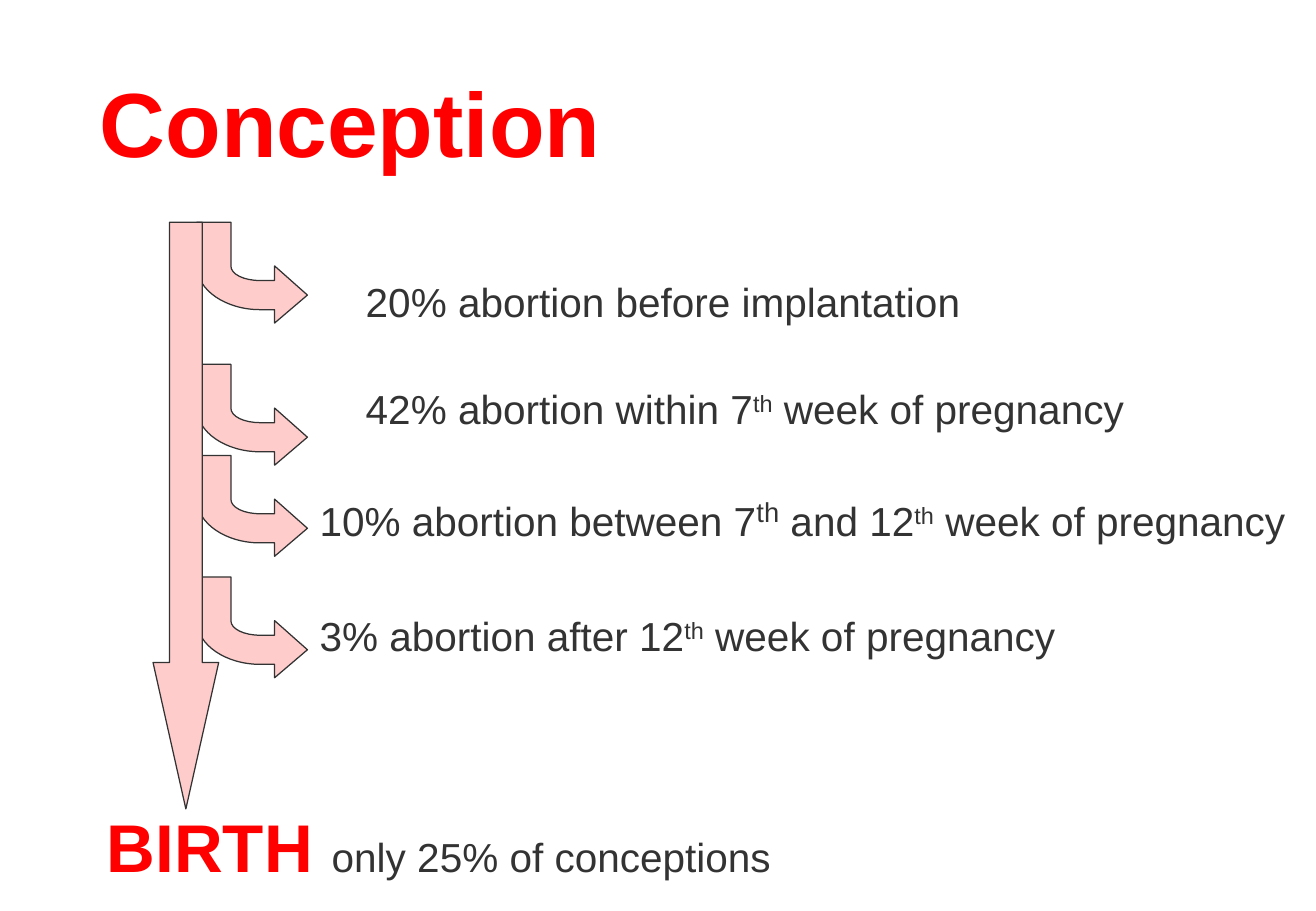
from lxml import etree
from pptx import Presentation
from pptx.dml.color import RGBColor
from pptx.enum.shapes import MSO_SHAPE
from pptx.enum.text import MSO_ANCHOR, MSO_AUTO_SIZE, PP_ALIGN
from pptx.oxml.ns import qn
from pptx.util import Inches, Pt

DOWN_ARROW = MSO_SHAPE.DOWN_ARROW
TOP, BOTTOM = MSO_ANCHOR.TOP, MSO_ANCHOR.BOTTOM
LEFT = PP_ALIGN.LEFT
NO_FIT = MSO_AUTO_SIZE.NONE

RED = RGBColor(0xFF, 0x00, 0x00)
DARK = RGBColor(0x33, 0x33, 0x33)
PINK = RGBColor(0xFF, 0xCC, 0xCC)

SUPERSCRIPT = "30000"
LOSS_ARROW_LEFT = 1.62
LOSS_ARROW_TOPS = (1.83, 3, 3.75, 4.75)
LOSS_ARROW = [
    (0.91, 0.6), (0.64, 0.83), (0.64, 0.72), (0.52, 0.72),
    (0.24, 0.72), (0, 0.56), (0, 0.36),
    (0, 0), (0.28, 0), (0.28, 0.36),
    (0.28, 0.43), (0.39, 0.48), (0.52, 0.48),
    (0.64, 0.48), (0.64, 0.36),
]
LOSS_ARROW_CURVES = (3, 9)

STAGES = [
    (2.38, 0, [("20% abortion before implantation", {})]),
    (2.38, 34.8, [
        ("42% abortion within 7", {}),
        ("th", {"raised": True}),
        (" week of pregnancy", {}),
    ]),
    (2, 33.4, [
        ("10% abortion between 7", {}),
        ("th", {"size": 28, "raised": True}),
        (" and 12", {}),
        ("th", {"raised": True}),
        (" week of pregnancy", {}),
    ]),
    (2, 38.7, [
        ("3% abortion after 12", {}),
        ("th", {"raised": True}),
        (" week of pregnancy", {}),
    ]),
    (0.25, 86, [
        ("BIRTH ", {"size": 40, "color": RED, "bold": True}),
        ("only 25% of conceptions", {}),
    ]),
]


class SlideBuilder:
    font_name = "Arial"

    def __init__(self, page):
        self.page = page

    def place(self, box, left, top, width, height, anchor):
        box.left, box.top = Inches(left), Inches(top)
        box.width, box.height = Inches(width), Inches(height)
        frame = box.text_frame
        frame.word_wrap = True
        frame.auto_size = NO_FIT
        frame.vertical_anchor = anchor
        return frame

    def style(self, span, size=24, color=DARK, bold=False, raised=False):
        span.font.name = self.font_name
        span.font.size = Pt(size)
        span.font.bold = bold
        span.font.color.rgb = color
        if raised:
            span.font._element.set("baseline", SUPERSCRIPT)

    def title(self, text, left, top, width, height):
        frame = self.place(self.page.shapes.title, left, top, width, height, BOTTOM)
        frame.text = text
        para = frame.paragraphs[0]
        para.alignment = LEFT
        self.style(para.runs[0], size=54, color=RED, bold=True)

    def body(self, lines, left, top, width, height):
        frame = self.place(self.page.placeholders[1], left, top, width, height, TOP)
        for index, (indent, space, spans) in enumerate(lines):
            para = frame.add_paragraph() if index else frame.paragraphs[0]
            properties = para._p.get_or_add_pPr()
            properties.set("marL", str(Inches(indent)))
            properties.set("indent", "0")
            etree.SubElement(properties, qn("a:buNone"))
            para.alignment = LEFT
            para.space_before = Pt(space)
            for text, look in spans:
                span = para.add_run()
                span.text = text
                self.style(span, **look)

    def paint(self, shape):
        shape.shadow.inherit = False
        shape.fill.solid()
        shape.fill.fore_color.rgb = PINK
        shape.line.color.rgb = DARK
        shape.line.width = Pt(0.75)

    def outline(self, points, curves, left, top):
        corners = [(Inches(left + x), Inches(top + y)) for x, y in points]
        builder = self.page.shapes.build_freeform(*corners[0])
        builder.add_line_segments(corners[1:], close=True)
        shape = builder.convert_to_shape()
        segments = list(shape._element.iter(qn("a:lnTo")))
        for start in curves:
            first, *others = segments[start:start + 3]
            bend = etree.Element(qn("a:cubicBezTo"))
            first.addprevious(bend)
            for segment in (first, *others):
                bend.append(segment[0])
                segment.getparent().remove(segment)
        self.paint(shape)

    def down_arrow(self, left, top, width, height, head):
        arrow = self.page.shapes.add_shape(
            DOWN_ARROW, Inches(left), Inches(top), Inches(width), Inches(height))
        arrow.adjustments[0] = 0.5
        arrow.adjustments[1] = head
        self.paint(arrow)


def main():
    deck = Presentation()
    deck.slide_width, deck.slide_height = Inches(10.83), Inches(7.5)
    page = deck.slides.add_slide(deck.slide_layouts[1])
    builder = SlideBuilder(page)
    builder.title("Conception", 0.72, 0.25, 9.21, 1.25)
    builder.body(STAGES, 0.53, 2.23, 10.3, 5.27)
    for top in LOSS_ARROW_TOPS:
        builder.outline(LOSS_ARROW, LOSS_ARROW_CURVES, LOSS_ARROW_LEFT, top)
    builder.down_arrow(1.26, 1.83, 0.54, 4.83, 2.23)
    deck.save("out.pptx")


if __name__ == "__main__":
    main()
